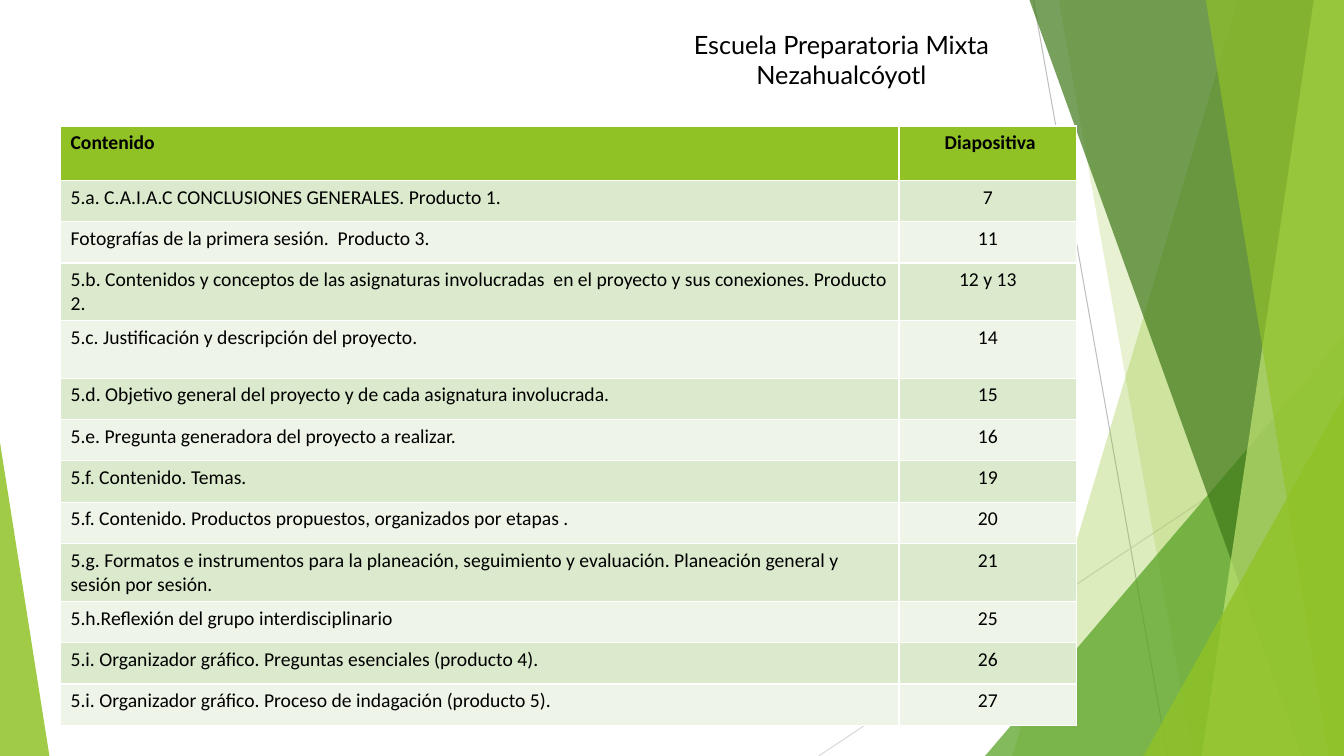
from lxml import etree
from pptx import Presentation
from pptx import util as u
from pptx.dml import color
from pptx.enum import shapes, text
from pptx.oxml import ns

WIDTH, HEIGHT = 13.33, 7.5
LIME, GREEN, FOREST, PALE = "90C226", "54A021", "3F7819", "C0E474"
HEADER_HEIGHT, ROW_HEIGHT, TALL_ROW = 0.54, 0.41, 0.57
PAGE_SHARE = 0.175

CONTENTS = [
    ("5.a. C.A.I.A.C CONCLUSIONES GENERALES. Producto 1.", "7", ROW_HEIGHT),
    ("Fotografías de la primera sesión.  Producto 3.", "11", ROW_HEIGHT),
    ("5.b. Contenidos y conceptos de las asignaturas involucradas  en el proyecto "
     "y sus conexiones. Producto 2.", "12 y 13", TALL_ROW),
    ("5.c. Justificación y descripción del proyecto.", "14", TALL_ROW),
    ("5.d. Objetivo general del proyecto y de cada asignatura involucrada.", "15", ROW_HEIGHT),
    ("5.e. Pregunta generadora del proyecto a realizar.", "16", ROW_HEIGHT),
    ("5.f. Contenido. Temas.", "19", ROW_HEIGHT),
    ("5.f. Contenido. Productos propuestos, organizados por etapas .", "20", ROW_HEIGHT),
    ("5.g. Formatos e instrumentos para la planeación, seguimiento y evaluación. "
     "Planeación general y sesión por sesión.", "21", TALL_ROW),
    ("5.h.Reflexión del grupo interdisciplinario", "25", ROW_HEIGHT),
    ("5.i. Organizador gráfico. Preguntas esenciales (producto 4).", "26", ROW_HEIGHT),
    ("5.i. Organizador gráfico. Proceso de indagación (producto 5).", "27", ROW_HEIGHT),
]


def rgb(code):
    return color.RGBColor.from_string(code)


def paint(shape, code, opacity):
    shape.shadow.inherit = False
    shape.line.fill.background()
    shape.fill.solid()
    shape.fill.fore_color.rgb = rgb(code)
    tint = shape.fill._xPr.find(".//" + ns.qn("a:srgbClr"))
    etree.SubElement(tint, ns.qn("a:alpha"), val=str(opacity * 1000))


def add_ray(slide, start, end, code):
    ray = slide.shapes.add_connector(
        shapes.MSO_CONNECTOR.STRAIGHT, *(u.Inches(v) for v in start + end))
    ray.line.color.rgb = rgb(code)
    ray.line.width = u.Pt(0.75)
    etree.SubElement(ray._element.spPr, ns.qn("a:effectLst"))


def add_facet(slide, box, top_x, bottom_x, code, opacity):
    left, top, width, height = box
    right, bottom = left + width, top + height
    corners = [(u.Inches(x), u.Inches(y)) for x, y in (
        (top_x, top), (right, top), (right, bottom), (bottom_x, bottom))]
    outline = slide.shapes.build_freeform(*corners[0])
    outline.add_line_segments(corners[1:], close=True)
    paint(outline.convert_to_shape(), code, opacity)


def add_corner(slide, box, width, height, apex, code, opacity):
    left = box[0] + apex * (box[2] - width)
    top = box[1] + box[3] - height
    corner = slide.shapes.add_shape(
        shapes.MSO_SHAPE.ISOSCELES_TRIANGLE,
        *(u.Inches(v) for v in (left, top, width, height)))
    corner.adjustments[0] = apex
    paint(corner, code, opacity)


def add_backdrop(slide, box):
    left, top, width, height = box
    right, bottom = left + width, top + height
    add_ray(slide, (10.25, top), (11.58, bottom), "BFBFBF")
    add_ray(slide, (right, 4.03), (8.12, bottom), "D9D9D9")
    add_facet(slide, box, 12.28, 10.04, LIME, 30)
    add_facet(slide, box, 10.5, 11.83, LIME, 20)
    add_corner(slide, box, 3.56, 4.17, 1, GREEN, 72)
    add_facet(slide, box, 10.21, 12.91, FOREST, 70)
    add_facet(slide, box, 13.03, 11.92, PALE, 70)
    add_facet(slide, box, 11.96, 13.18, LIME, 65)
    add_corner(slide, box, 1.99, 3.57, 1, LIME, 80)
    add_corner(slide, box, 0.49, 3.11, 0, LIME, 85)


def write(paragraph, words, size, font, bold=False, centred=False):
    paragraph.alignment = text.PP_ALIGN.CENTER if centred else text.PP_ALIGN.LEFT
    run = paragraph.add_run()
    run.text = words
    run.font.size = u.Pt(size)
    run.font.name = font
    run.font.bold = bold
    run.font.color.rgb = rgb("000000")


def add_contents(slide, box):
    entries = [("Contenido", " Diapositiva", HEADER_HEIGHT)] + CONTENTS
    grid = slide.shapes.add_table(len(entries), 2, *(u.Inches(v) for v in box)).table
    for column, share in zip(grid.columns, (1 - PAGE_SHARE, PAGE_SHARE)):
        column.width = u.Inches(box[2] * share)
    for index, (topic, page, height) in enumerate(entries):
        grid.rows[index].height = u.Inches(height)
        band = LIME if index == 0 else ("EEF4E8", "DBE9CD")[index % 2]
        for position, words in enumerate((topic, page)):
            cell = grid.cell(index, position)
            cell.fill.solid()
            cell.fill.fore_color.rgb = rgb(band)
            write(cell.text_frame.paragraphs[0], words, 14, "Calibri",
                  bold=index == 0, centred=position == 1)


def add_school(slide, box):
    frame = slide.shapes.add_textbox(*(u.Inches(v) for v in box)).text_frame
    frame.word_wrap = True
    frame.auto_size = text.MSO_AUTO_SIZE.SHAPE_TO_FIT_TEXT
    write(frame.paragraphs[0], "Escuela Preparatoria Mixta Nezahualcóyotl", 18, "Lato",
          centred=True)


def main():
    deck = Presentation()
    deck.slide_width, deck.slide_height = u.Inches(WIDTH), u.Inches(HEIGHT)
    slide = deck.slides.add_slide(deck.slide_layouts[6])
    add_backdrop(slide, (0, 0, WIDTH, HEIGHT))
    add_contents(slide, (0.6, 1.25, 10.08, 5.89))
    add_school(slide, (6.4, 0.24, 3.89, 0.71))
    deck.save("out.pptx")


if __name__ == "__main__":
    main()
